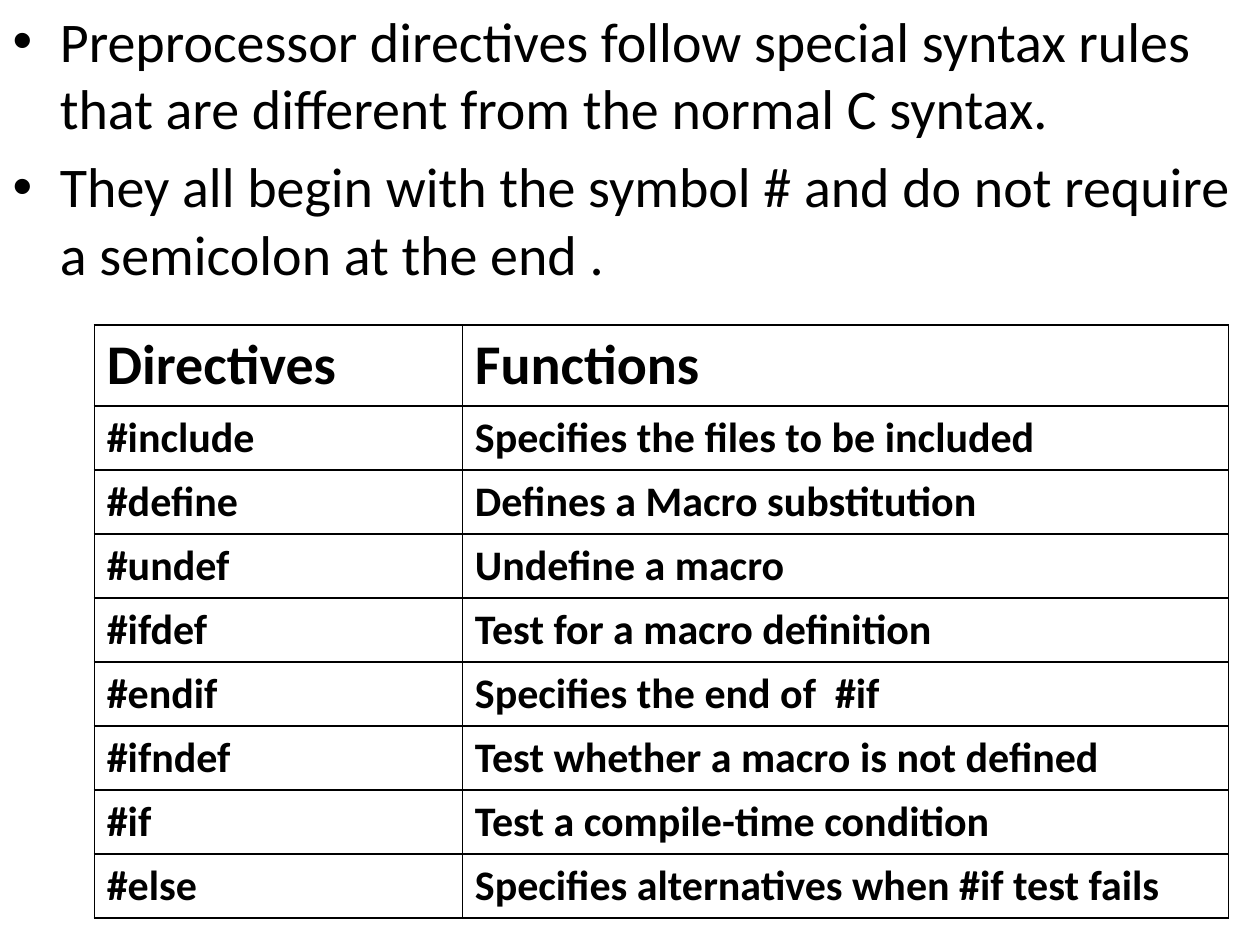
from dataclasses import dataclass

from lxml import etree
from pptx import Presentation
from pptx.dml.color import RGBColor
from pptx.enum.text import MSO_AUTO_SIZE, MSO_ANCHOR
from pptx.oxml.ns import qn
from pptx.util import Cm, Pt

NO_AUTOFIT = MSO_AUTO_SIZE.NONE
TOP = MSO_ANCHOR.TOP
TITLE_AND_CONTENT = 1
BORDER_SIDES = ("a:lnL", "a:lnR", "a:lnT", "a:lnB")


@dataclass(frozen=True)
class Theme:
    font: str = "Calibri"
    ink: str = "000000"
    large: int = 32
    regular: int = 24
    border: int = 1


THEME = Theme()

RULES = [
    "Preprocessor directives follow special syntax rules that are different from the normal C syntax.",
    "They all begin with the symbol # and do not require a semicolon at the end .",
]

DIRECTIVES = [
    ("Directives", "Functions"),
    ("#include", "Specifies the files to be included"),
    ("#define", "Defines a Macro substitution"),
    ("#undef", "Undefine a macro"),
    ("#ifdef", "Test for a macro definition"),
    ("#endif", "Specifies the end of  #if"),
    ("#ifndef", "Test whether a macro is not defined"),
    ("#if", "Test a compile-time condition"),
    ("#else", "Specifies alternatives when #if test fails"),
]

COLUMN_WIDTHS = (Cm(7.42), Cm(15.44))
HEADER_HEIGHT = Cm(1.63)
ROW_HEIGHT = Cm(1.29)


def style_paragraph(paragraph, size, bold=False):
    font = paragraph.font
    font.name = THEME.font
    font.size = Pt(size)
    font.bold = bold
    font.color.rgb = RGBColor.from_string(THEME.ink)


def fill_body(body, lines, width, height):
    body.left, body.top, body.width, body.height = 0, 0, width, height
    frame = body.text_frame
    frame.auto_size = NO_AUTOFIT
    frame.vertical_anchor = TOP
    frame.text = "\n".join(lines)
    for paragraph in frame.paragraphs:
        style_paragraph(paragraph, THEME.large)


def add_cell_borders(cell):
    """Draw all four sides; the lines must come before the cell's fill."""
    properties = cell._tc.get_or_add_tcPr()
    for position, side in enumerate(BORDER_SIDES):
        line = etree.Element(qn(side), w=str(Pt(THEME.border)))
        fill = etree.SubElement(line, qn("a:solidFill"))
        etree.SubElement(fill, qn("a:srgbClr"), val=THEME.ink)
        properties.insert(position, line)


def fill_cell(cell, text, size):
    cell.text = text
    cell.fill.background()
    style_paragraph(cell.text_frame.paragraphs[0], size, bold=True)
    add_cell_borders(cell)


def add_directive_table(slide, rows, left, top):
    height = HEADER_HEIGHT + ROW_HEIGHT * (len(rows) - 1)
    table = slide.shapes.add_table(
        len(rows), len(COLUMN_WIDTHS), left, top, sum(COLUMN_WIDTHS), height
    ).table
    table.horz_banding = False
    for column, width in zip(table.columns, COLUMN_WIDTHS):
        column.width = width
    for index, (row, texts) in enumerate(zip(table.rows, rows)):
        is_header = index == 0
        row.height = HEADER_HEIGHT if is_header else ROW_HEIGHT
        size = THEME.large if is_header else THEME.regular
        for cell, text in zip(row.cells, texts):
            fill_cell(cell, text, size)


def main():
    presentation = Presentation()
    presentation.slide_width = Cm(25.4)
    presentation.slide_height = Cm(19.05)
    slide = presentation.slides.add_slide(
        presentation.slide_layouts[TITLE_AND_CONTENT]
    )
    title, body = slide.placeholders
    title.element.getparent().remove(title.element)
    fill_body(body, RULES, presentation.slide_width, presentation.slide_height)
    add_directive_table(slide, DIRECTIVES, left=Cm(1.9), top=Cm(6.55))
    presentation.save("out.pptx")


if __name__ == "__main__":
    main()
